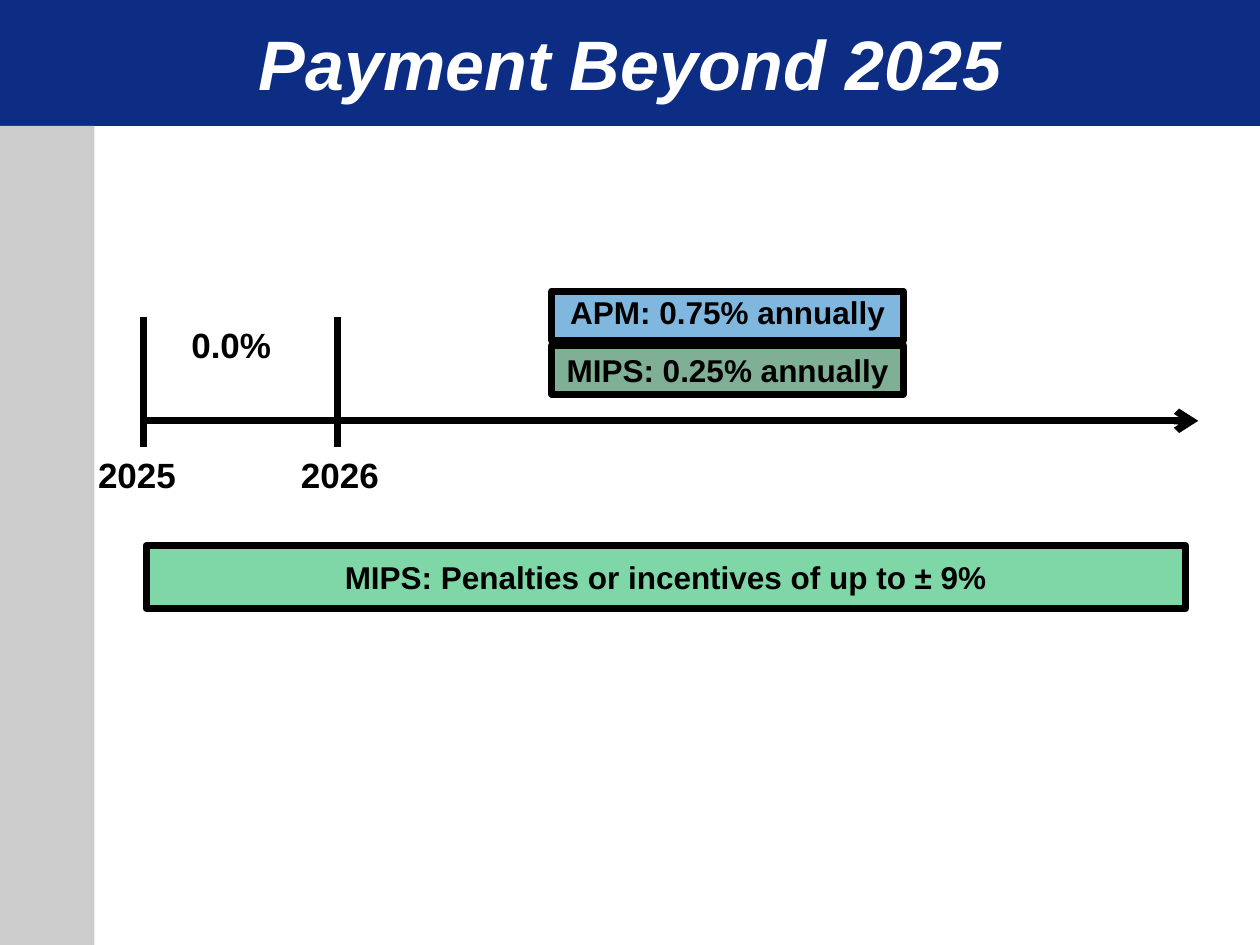
from dataclasses import dataclass

from lxml.etree import SubElement
from pptx import Presentation
from pptx.dml.color import RGBColor
from pptx.enum.shapes import MSO_CONNECTOR, MSO_SHAPE
from pptx.enum.text import MSO_ANCHOR, PP_ALIGN
from pptx.oxml.ns import qn
from pptx.util import Inches, Pt

COLUMNS, ROWS = 100, 75
SLIDE_WIDTH, SLIDE_HEIGHT = Inches(10), Inches(7.5)


@dataclass(frozen=True)
class Theme:
    font: str = "Arial"
    band: str = "0C2D83"
    sidebar: str = "CCCCCC"
    ink: str = "000000"
    heading: str = "FFFFFF"
    apm: str = "0070C0"
    mips: str = "00602B"
    adjustment: str = "00B050"
    tint: int = 50
    stroke: float = 4
    title_size: int = 40
    year_size: int = 20
    rate_size: int = 18


THEME = Theme()


@dataclass(frozen=True)
class Box:
    left: float
    top: float
    width: float
    height: float

    def area(self, column, row, width, height):
        return Box(self.left + column, self.top + row, width, height)

    def point(self, column, row):
        return (round((self.left + column) * SLIDE_WIDTH / COLUMNS),
                round((self.top + row) * SLIDE_HEIGHT / ROWS))

    def frame(self):
        return (*self.point(0, 0),
                round(self.width * SLIDE_WIDTH / COLUMNS),
                round(self.height * SLIDE_HEIGHT / ROWS))


def write(shape, text, size, color=THEME.ink, align=PP_ALIGN.CENTER,
          anchor=MSO_ANCHOR.MIDDLE, italic=False):
    frame = shape.text_frame
    frame.word_wrap = True
    frame.vertical_anchor = anchor
    frame.text = text
    paragraph = frame.paragraphs[0]
    paragraph.alignment = align
    font = paragraph.runs[0].font
    formats = {"name": THEME.font, "size": Pt(size), "bold": True, "italic": italic}
    for attribute, value in formats.items():
        setattr(font, attribute, value)
    font.color.rgb = RGBColor.from_string(color)


def add_panel(slide, box, color):
    panel = slide.shapes.add_shape(MSO_SHAPE.RECTANGLE, *box.frame())
    panel.shadow.inherit = False
    panel.fill.solid()
    panel.fill.fore_color.rgb = RGBColor.from_string(color)
    panel.line.fill.background()
    return panel


def add_bar(slide, box, color):
    bar = add_panel(slide, box, color)
    tone = bar._element.spPr.find(qn("a:solidFill"))[0]
    SubElement(tone, qn("a:alpha"), val=str(THEME.tint * 1000))
    bar.line.color.rgb = RGBColor.from_string(THEME.ink)
    bar.line.width = Pt(THEME.stroke)
    return bar


def add_label(slide, box, text, size, align):
    label = slide.shapes.add_textbox(*box.frame())
    write(label, text, size, align=align, anchor=MSO_ANCHOR.TOP)


def add_rule(slide, start, end, arrow=False):
    rule = slide.shapes.add_connector(MSO_CONNECTOR.STRAIGHT, *start, *end)
    rule.line.color.rgb = RGBColor.from_string(THEME.ink)
    rule.line.width = Pt(THEME.stroke)
    properties = rule._element.spPr
    if arrow:
        SubElement(properties.find(qn("a:ln")), qn("a:tailEnd"), type="arrow")
    SubElement(properties, qn("a:effectLst"))


def build_header(slide, box):
    add_panel(slide, box, THEME.band)
    title = slide.shapes.title
    title.left, title.top, title.width, title.height = box.frame()
    write(title, "Payment Beyond 2025", THEME.title_size, THEME.heading, italic=True)
    slide.shapes._spTree.append(title._element)


def build_timeline(slide, box):
    axis_row, tick_end = 8.2, 10.3
    add_rule(slide, box.point(0, axis_row), box.point(box.width, axis_row), arrow=True)
    for year, tick, label in (("2025", 0, -4.6), ("2026", 15.4, 11.5)):
        add_rule(slide, box.point(tick, 0), box.point(tick, tick_end))
        add_label(slide, box.area(label, tick_end, 11, 4.4), year,
                  THEME.year_size, PP_ALIGN.LEFT)
    add_label(slide, box.area(2.8, 0, 11, 4.4), "0.0%", THEME.year_size, PP_ALIGN.LEFT)


def build_rates(slide, box):
    rates = (("APM: 0.75% annually", THEME.apm, -0.3),
             ("MIPS: 0.25% annually", THEME.mips, 0))
    pitch = box.height / len(rates)
    for index, (text, color, text_shift) in enumerate(rates):
        row = index * pitch
        add_bar(slide, box.area(0, row, box.width, 3.9), color)
        add_label(slide, box.area(0, row + text_shift, box.width, 4), text,
                  THEME.rate_size, PP_ALIGN.CENTER)


def build_adjustment(slide, box):
    bar = add_bar(slide, box, THEME.adjustment)
    write(bar, "MIPS: Penalties or incentives of up to ± 9%", THEME.rate_size)


def main():
    deck = Presentation()
    deck.slide_width, deck.slide_height = SLIDE_WIDTH, SLIDE_HEIGHT
    slide = deck.slides.add_slide(deck.slide_layouts[5])
    page = Box(0, 0, COLUMNS, ROWS)
    build_header(slide, page.area(0, 0, COLUMNS, 10))
    add_panel(slide, page.area(0, 10, 7.5, ROWS - 10), THEME.sidebar)
    build_timeline(slide, page.area(11.4, 25.2, 83.7, 14.7))
    build_rates(slide, page.area(43.8, 23.1, 27.9, 8.6))
    build_adjustment(slide, page.area(11.6, 43.3, 82.5, 5))
    deck.save("out.pptx")


if __name__ == "__main__":
    main()
